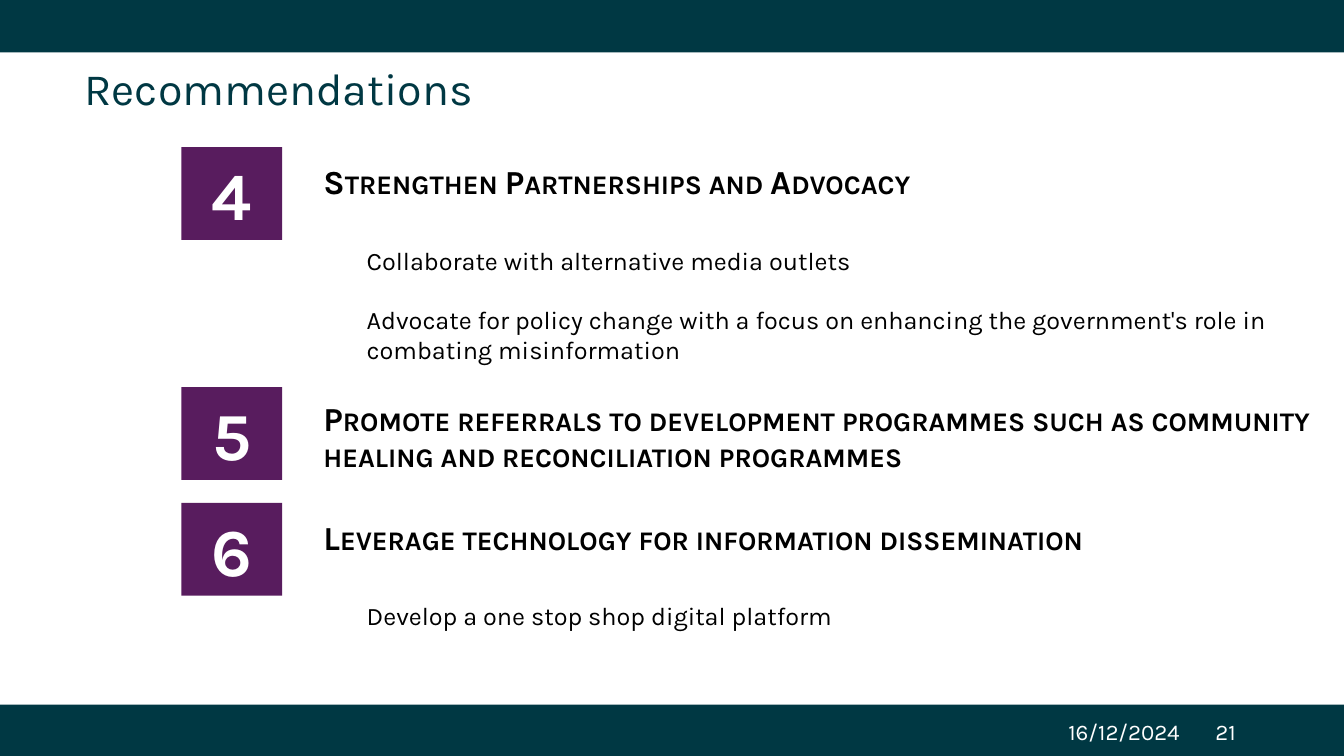
from pptx import Presentation
from pptx import util as u
from pptx.dml.color import RGBColor
from pptx.enum import shapes, text

COLORS = {"teal": "003843", "purple": "581C5E", "black": "000000", "white": "FFFFFF"}
BADGE_LEFT, BADGE_WIDTH, ROW_HEIGHT = 13.5, 7.5, 12.27

# badge top, heading top, heading, details
RECOMMENDATIONS = [
    (19.47, 21.2, "Strengthen Partnerships and Advocacy",
     ["Collaborate with alternative media outlets",
      "Advocate for policy change with a focus on enhancing the government's "
      "role in combating misinformation"]),
    (51.2, 52.53, "Promote referrals to development programmes such as community "
     "healing and reconciliation programmes", []),
    (66.53, 68.27, "Leverage technology for information dissemination",
     ["Develop a one stop shop digital platform"]),
]


class SlideBuilder:
    """Places styled elements; boxes are percentages of the slide's size."""

    font = "Karla"

    def __init__(self, presentation):
        self.width = presentation.slide_width
        self.height = presentation.slide_height
        self.slide = presentation.slides.add_slide(presentation.slide_layouts[6])

    def place(self, left, top, width, height):
        return (int(self.width * left / 100), int(self.height * top / 100),
                int(self.width * width / 100), int(self.height * height / 100))

    def set_text(self, shape, lines, size, color, bold=False, small_caps=False,
                 line_spacing=None, gap=0):
        frame = shape.text_frame
        frame.word_wrap = True
        frame.text = "\n".join(lines)
        for index, paragraph in enumerate(frame.paragraphs):
            if line_spacing:
                paragraph.line_spacing = line_spacing
            if index:
                paragraph.space_before = u.Pt(gap)
            for run in paragraph.runs:
                run.font.name = self.font
                run.font.size = u.Pt(size)
                run.font.bold = bold
                run.font.color.rgb = RGBColor.from_string(COLORS[color])
                if small_caps:
                    run._r.get_or_add_rPr().set("cap", "small")

    def block(self, box, color):
        shape = self.slide.shapes.add_shape(
            shapes.MSO_SHAPE.RECTANGLE, *self.place(*box))
        shape.shadow.inherit = False
        shape.fill.solid()
        shape.fill.fore_color.rgb = RGBColor.from_string(COLORS[color])
        shape.line.fill.background()
        return shape

    def badge(self, top, number):
        shape = self.block((BADGE_LEFT, top, BADGE_WIDTH, ROW_HEIGHT), "purple")
        self.set_text(shape, [str(number)], 48, "white", bold=True)
        shape.text_frame.vertical_anchor = text.MSO_ANCHOR.MIDDLE
        shape.text_frame.paragraphs[0].alignment = text.PP_ALIGN.CENTER

    def label(self, box, lines, size, color, **style):
        shape = self.slide.shapes.add_textbox(*self.place(*box))
        self.set_text(shape, lines, size, color, **style)


def main():
    presentation = Presentation()
    presentation.slide_width = u.Inches(13.33)
    presentation.slide_height = u.Inches(7.5)
    builder = SlideBuilder(presentation)

    # Bars at the bottom and top
    for top in (93.2, -0.4):
        builder.block((0, top, 100, 7.33), "teal")

    # Title
    builder.label((5.55, 8.13, 88.65, 9.73), ["Recommendations"], 32, "teal",
                  line_spacing=0.9)

    # Date and slide number
    builder.label((78.75, 94.4, 10.95, 5.33), ["16/12/2024"], 16, "white")
    builder.label((89.7, 94.4, 4.5, 5.33), ["21"], 16, "white")

    # Numbered recommendations
    for number, (top, heading_top, heading, details) in enumerate(RECOMMENDATIONS, 4):
        builder.label((23.33, heading_top, 75, ROW_HEIGHT), [heading], 24, "black",
                      bold=True, small_caps=True, line_spacing=0.9)
        builder.badge(top, number)
        if details:
            height = 5.33 if len(details) == 1 else 25.6
            builder.label((26.55, top + ROW_HEIGHT, 68.55, height), details, 18,
                          "black", gap=21)

    presentation.save("out.pptx")


if __name__ == "__main__":
    main()
